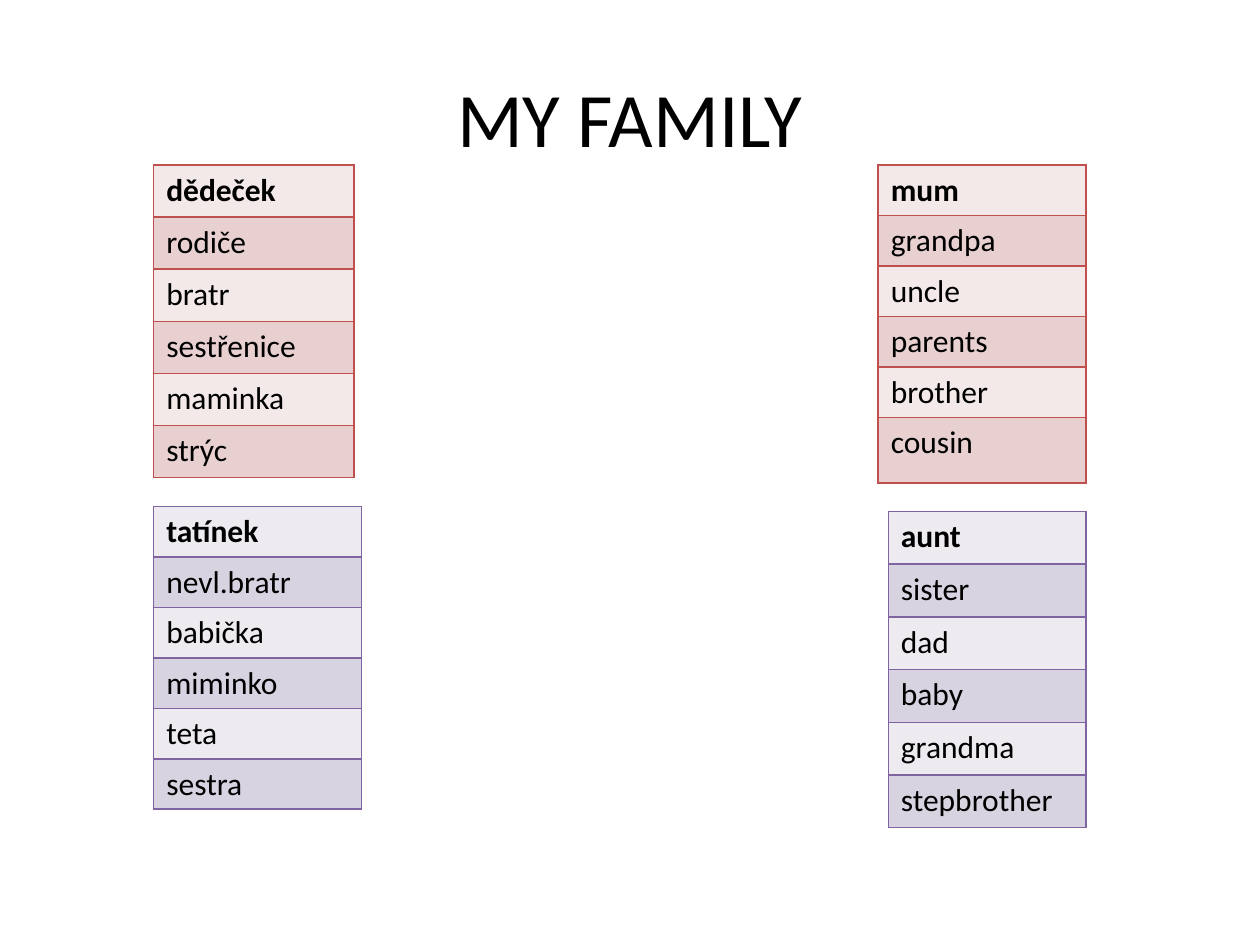
from lxml import etree
from pptx import Presentation, util as u
from pptx.dml.color import RGBColor
from pptx.enum import text
from pptx.oxml import ns

BLACK = RGBColor(0x00, 0x00, 0x00)
RED = RGBColor(0xC0, 0x50, 0x4D)
RED_BANDS = (RGBColor(0xF4, 0xE9, 0xE9), RGBColor(0xE8, 0xD0, 0xD0))
PURPLE = RGBColor(0x80, 0x64, 0xA2)
PURPLE_BANDS = (RGBColor(0xED, 0xEA, 0xF0), RGBColor(0xD8, 0xD3, 0xE0))
FONT = "Calibri"
COLUMNS, ROWS = 100, 75

WORD_LISTS = [
    ((12.2, 13.1, 15.9, 24.8), RED, RED_BANDS, 4.13,
     ["dědeček", "rodiče", "bratr", "sestřenice", "maminka", "strýc"]),
    ((69.7, 13.1, 16.5, 25.2), RED, RED_BANDS, 5.2,
     ["mum", "grandpa", "uncle", "parents", "brother", "cousin"]),
    ((12.2, 40.2, 16.5, 24), PURPLE, PURPLE_BANDS, 4,
     ["tatínek", "nevl.bratr", "babička", "miminko", "teta", "sestra"]),
    ((70.5, 40.6, 15.7, 25.1), PURPLE, PURPLE_BANDS, 4.18,
     ["aunt", "sister", "dad", "baby", "grandma", "stepbrother"]),
]


def place(deck, box):
    column, row = deck.slide_width / COLUMNS, deck.slide_height / ROWS
    left, top, width, height = box
    return [u.Emu(round(length)) for length in
            (left * column, top * row, width * column, height * row)]


def style_font(font, size, bold=False):
    font.name = FONT
    font.size = u.Pt(size)
    font.bold = bold
    font.color.rgb = BLACK


def add_title(deck, page, box, words):
    frame = page.shapes.add_textbox(*place(deck, box)).text_frame
    frame.word_wrap = True
    frame.vertical_anchor = text.MSO_ANCHOR.MIDDLE
    para = frame.paragraphs[0]
    para.text = words
    para.alignment = text.PP_ALIGN.CENTER
    style_font(para.font, 44)


def add_borders(cell, color):
    properties = cell._tc.get_or_add_tcPr()
    for side in ("a:lnL", "a:lnR", "a:lnT", "a:lnB"):
        line = etree.SubElement(properties, ns.qn(side), w=str(u.Pt(1)))
        fill = etree.SubElement(line, ns.qn("a:solidFill"))
        etree.SubElement(fill, ns.qn("a:srgbClr"), val=str(color))


def add_word_list(deck, page, box, border, bands, last_row, words):
    left, top, width, height = place(deck, box)
    table = page.shapes.add_table(len(words), 1, left, top, width, height).table
    table.first_row = False
    table.horz_banding = False
    last_height = round(last_row * deck.slide_height / ROWS)
    row_height = (height - last_height) // (len(words) - 1)
    for index, word in enumerate(words):
        is_last = index == len(words) - 1
        table.rows[index].height = last_height if is_last else row_height
        cell = table.cell(index, 0)
        add_borders(cell, border)
        cell.fill.solid()
        cell.fill.fore_color.rgb = bands[index % 2]
        cell.text = word
        style_font(cell.text_frame.paragraphs[0].font, 18, bold=index == 0)


def main():
    deck = Presentation()
    deck.slide_width, deck.slide_height = u.Inches(10), u.Inches(7.5)
    page = deck.slides.add_slide(deck.slide_layouts[6])
    add_title(deck, page, (5, 3, 90, 12.5), "MY FAMILY")
    for word_list in WORD_LISTS:
        add_word_list(deck, page, *word_list)
    deck.save("out.pptx")


if __name__ == "__main__":
    main()
